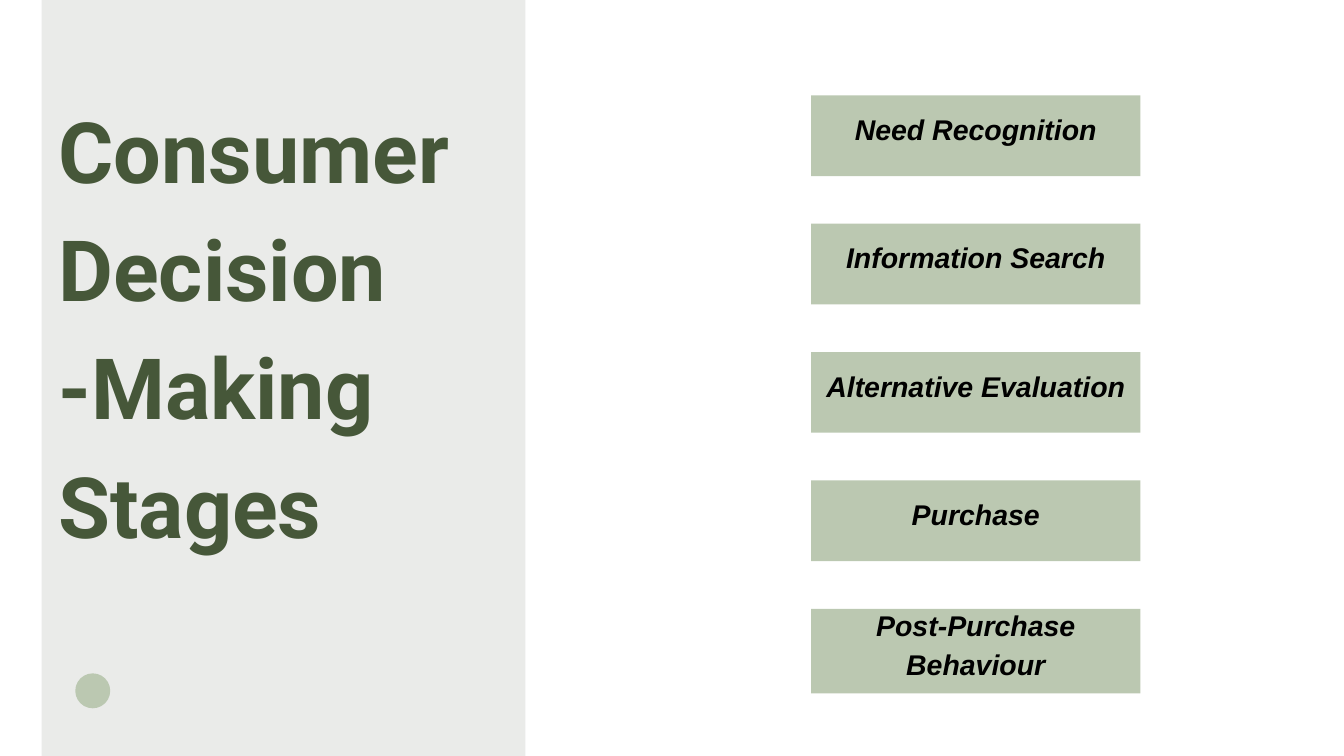
from pptx import Presentation
from pptx.dml.color import RGBColor
from pptx.enum import shapes, text
from pptx.util import Inches, Pt

TITLE = ["Consumer Decision -Making", "Stages"]
STAGES = ["Need Recognition", "Information Search", "Alternative Evaluation",
          "Purchase", "Post-Purchase Behaviour"]
SAGE, MOSS, GREY, BLACK = "BBC8B1", "465739", "EAEBE9", "000000"

LEFT, TOP, STEP = 12.07, 1.42, 1.91
WIDTH, HIGH, LAST = 4.9, 1.2, 1.26
RISE = 0.28  # labels start this far above their bar

HEAD = dict(name="Roboto", size=Pt(90.5), bold=True, italic=False)
LABEL = dict(name="Arial", size=Pt(30.5), bold=True, italic=True)


def color(code):
    return RGBColor.from_string(code)


def block(kind, box, fill):
    shape = slide.shapes.add_shape(kind, *map(Inches, box))
    shape.shadow.inherit = False
    shape.fill.solid()
    shape.fill.fore_color.rgb = color(fill)
    shape.line.fill.background()


def write(frame, lines, look, ink, lead, align, inset, anchor):
    frame.word_wrap = True
    frame.vertical_anchor = anchor
    for side in ("left", "top", "right", "bottom"):
        setattr(frame, f"margin_{side}", Inches(inset))
    frame.text = "\n".join(lines)
    for para in frame.paragraphs:
        para.alignment = align
        para.line_spacing = Pt(lead)
        for run in para.runs:
            for key, value in look.items():
                setattr(run.font, key, value)
            run.font.color.rgb = color(ink)


prs = Presentation()
prs.slide_width, prs.slide_height = Inches(20), Inches(11.25)
slide = prs.slides.add_slide(prs.slide_layouts[5])
kinds = shapes.MSO_SHAPE

block(kinds.RECTANGLE, (0.62, -0.27, 7.2, 12.22), GREY)
block(kinds.OVAL, (1.12, 10.02, 0.52, 0.52), SAGE)

for i, stage in enumerate(STAGES):
    y = TOP + i * STEP
    high = LAST if stage == STAGES[-1] else HIGH
    block(kinds.RECTANGLE, (LEFT, y, WIDTH, high), SAGE)
    label = slide.shapes.add_textbox(
        *map(Inches, (LEFT, y - RISE, WIDTH, high + RISE)))
    write(label.text_frame, [stage], LABEL, BLACK, 42.7,
          text.PP_ALIGN.CENTER, 0.06, text.MSO_ANCHOR.MIDDLE)

title = slide.shapes.title
title.left, title.top, title.width, title.height = map(
    Inches, (0.87, 1.22, 6.69, 6.95))
write(title.text_frame, TITLE, HEAD, MOSS, 126.7,
      text.PP_ALIGN.LEFT, 0, text.MSO_ANCHOR.TOP)
title.text_frame.auto_size = text.MSO_AUTO_SIZE.SHAPE_TO_FIT_TEXT
slide.shapes._spTree.append(title._element)  # bring in front of the panel

prs.save("out.pptx")
